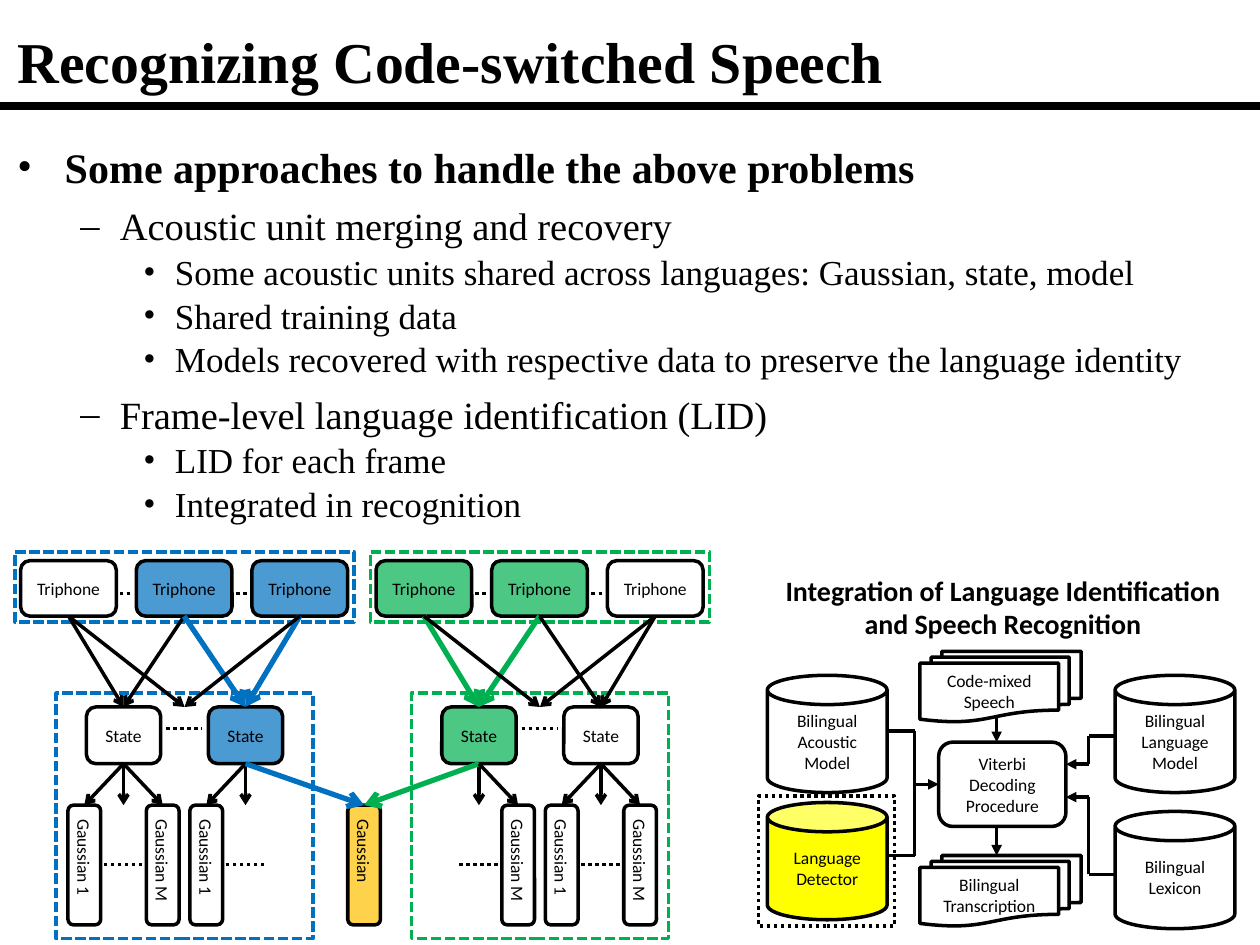
from lxml import etree
from pptx import Presentation
from pptx.dml.color import RGBColor
from pptx.enum import dml, shapes, text
from pptx.oxml.ns import qn
from pptx.util import Pt

COLORS = {"black": "000000", "white": "FFFFFF", "blue": "0070C0",
          "green": "00B050", "amber": "FFC000", "yellow": "FFFF00"}
SHAPE = shapes.MSO_SHAPE
DOT = dml.MSO_LINE.ROUND_DOT
DASH = dml.MSO_LINE.SQUARE_DOT
BODY = [
    (0, "Some approaches to handle the above problems"),
    (1, "Acoustic unit merging and recovery"),
    (2, "Some acoustic units shared across languages: Gaussian, state, model"),
    (2, "Shared training data"),
    (2, "Models recovered with respective data to preserve the language identity"),
    (1, "Frame-level language identification (LID)"),
    (2, "LID for each frame"),
    (2, "Integrated in recognition"),
]
LEVELS = [(24, 27, 27, "•", 1.2), (22, 58.5, 22.5, "–", 1.2), (20, 90, 18, "•", 1.0)]


def rgb(name):
    return RGBColor.from_string(COLORS[name])


def style(p, size, font="Calibri", bold=False, align=text.PP_ALIGN.CENTER):
    p.alignment = align
    for r in p.runs:
        r.font.size = Pt(size)
        r.font.name = font
        r.font.bold = bold
        r.font.color.rgb = rgb("black")


def set_line(line, color, width, dash=None):
    line.color.rgb = rgb(color)
    line.width = Pt(width)
    if dash is not None:
        line.dash_style = dash


def add_box(s, kind, x, y, w, h, label="", fill=None, alpha=100, line="black",
            dash=None, inset=None, vertical=False):
    sp = s.shapes.add_shape(kind, Pt(x), Pt(y), Pt(w), Pt(h))
    sp.shadow.inherit = False
    set_line(sp.line, line, 2, dash)
    if fill:
        sp.fill.solid()
        sp.fill.fore_color.rgb = rgb(fill)
        if alpha < 100:
            clr = sp._element.spPr.find(".//" + qn("a:srgbClr"))
            etree.SubElement(clr, qn("a:alpha")).set("val", str(alpha * 1000))
    else:
        sp.fill.background()
    if label:
        tf = sp.text_frame
        tf.text = label
        tf.word_wrap = True
        tf.vertical_anchor = text.MSO_ANCHOR.MIDDLE
        if inset is not None:
            tf.margin_left = tf.margin_right = Pt(inset)
            tf.margin_top = tf.margin_bottom = Pt(inset)
        if vertical:
            tf._txBody.bodyPr.set("vert", "eaVert")
        for p in tf.paragraphs:
            style(p, 10)
    return sp


def add_line(s, start, end, color="black", width=2, dash=None, arrow=None):
    c = s.shapes.add_connector(shapes.MSO_CONNECTOR.STRAIGHT,
                               *[Pt(v) for v in (*start, *end)])
    set_line(c.line, color, width, dash)
    if arrow:
        etree.SubElement(c.line._get_or_add_ln(), qn("a:tailEnd")).set("type", arrow)
    etree.SubElement(c._element.spPr, qn("a:effectLst"))
    return c


def add_link(s, upper, lower, color="black"):
    c = add_line(s, (0, 0), (0, 0), color, 2 if color == "black" else 3, arrow="arrow")
    c.begin_connect(upper, 2)
    c.end_connect(lower, 0)


def add_path(s, points, arrow=None):
    last = len(points) - 2
    for i, (start, end) in enumerate(zip(points, points[1:])):
        c = add_line(s, start, end, arrow=arrow if i == last else None)
    return c


def add_heading(s, x, y, w, h):
    sp = s.shapes.title
    sp.left, sp.top, sp.width, sp.height = Pt(x), Pt(y), Pt(w), Pt(h)
    tf = sp.text_frame
    tf.text = "Recognizing Code-switched Speech"
    tf.auto_size = text.MSO_AUTO_SIZE.NONE
    tf.vertical_anchor = text.MSO_ANCHOR.MIDDLE
    style(tf.paragraphs[0], 33, "Times New Roman", True, text.PP_ALIGN.LEFT)
    add_line(s, (0, 60.5), (720, 60.5), width=4.5)


def add_body(s, x, y, w, h):
    tf = s.shapes.add_textbox(Pt(x), Pt(y), Pt(w), Pt(h)).text_frame
    tf.word_wrap = True
    tf.text = "\n".join(line for _, line in BODY)
    for p, (level, _) in zip(tf.paragraphs, BODY):
        size, margin, hang, bullet, spacing = LEVELS[level]
        style(p, size, "Times New Roman", level == 0, text.PP_ALIGN.LEFT)
        p.level = level
        p.line_spacing = spacing
        p.space_before = Pt(1 if level else 3)
        pPr = p._p.get_or_add_pPr()
        pPr.set("marL", str(Pt(margin)))
        pPr.set("indent", str(-Pt(hang)))
        etree.SubElement(pPr, qn("a:buFont")).set("typeface", "Times New Roman")
        etree.SubElement(pPr, qn("a:buChar")).set("char", bullet)


def add_gaussian(s, cx, y, label, fill=None):
    return add_box(s, SHAPE.ROUNDED_RECTANGLE, cx - 9.35, y, 18.7, 68.4, label,
                   fill, 70, vertical=True)


def add_language(s, x, y, color, tinted, merged, shared):
    state_y, gauss_y = y + 88.6, y + 144.7
    add_box(s, SHAPE.RECTANGLE, x, y, 193.7, 40, line=color, dash=DASH)
    add_box(s, SHAPE.RECTANGLE, x + 23.4, y + 80.6, 146.9, 140.4, line=color, dash=DASH)
    triphones = [add_box(s, SHAPE.ROUNDED_RECTANGLE, x + 3.2 + 66.1 * i, y + 5, 54.7, 31.7,
                         "Triphone", color if i in tinted else None, 70)
                 for i in range(3)]
    for i in range(2):
        dot_x = x + 59.8 + 66.5 * i
        add_line(s, (dot_x, y + 23.8), (dot_x + 7.5, y + 23.8), dash=DOT)

    centers = [x + 62, x + 131.7]
    states = [add_box(s, SHAPE.ROUNDED_RECTANGLE, cx - 21.25, state_y, 42.5, 32.4,
                      "State", color if i == merged else None, 70)
              for i, cx in enumerate(centers)]
    add_line(s, (x + 86.4, y + 100.8), (x + 106.6, y + 100.8), dash=DOT)

    for t, n in [(0, 0), (1, 0), (1, 1), (2, 1)]:
        add_link(s, triphones[t], states[n],
                 color if t in tinted and n == merged else "black")
    for t in (triphones[0], triphones[2]):
        c = add_line(s, (0, 0), (sum(centers) / 2, state_y), arrow="arrow")
        c.begin_connect(t, 2)

    for i, cx in enumerate(centers):
        c = add_line(s, (cx, state_y), (cx, gauss_y), arrow="arrow")
        c.begin_connect(states[i], 2)
        add_line(s, (cx - 11.3, y + 178.6), (cx + 11.1, y + 178.6), dash=DOT)
        for side, label in [(-1, "Gaussian 1"), (1, "Gaussian M")]:
            inner = side == (1 if merged else -1)
            if i == merged and inner:
                add_link(s, states[i], shared, color)
            else:
                add_link(s, states[i], add_gaussian(s, cx + 22.4 * side, gauss_y, label))


def add_unit_sharing(s, x, y):
    shared = add_gaussian(s, x + 199.5, y + 144.7, "Gaussian", "amber")
    add_language(s, x, y, "blue", (1, 2), 1, shared)
    add_language(s, x + 203.1, y, "green", (0, 1), 0, shared)


def add_decoder(s, x, y):
    def node(kind, dx, dy, w, h, label, fill="white"):
        return add_box(s, kind, x + dx, y + dy, w, h, label, fill, inset=0)

    def route(*points, arrow="triangle"):
        return add_path(s, [(x + dx, y + dy) for dx, dy in points], arrow)

    tf = s.shapes.add_textbox(Pt(x + 7.2), Pt(y + 2.9), Pt(267.8), Pt(39.6)).text_frame
    tf.word_wrap = True
    tf.vertical_anchor = text.MSO_ANCHOR.MIDDLE
    tf.text = "Integration of Language Identification and Speech Recognition"
    style(tf.paragraphs[0], 16, bold=True)

    viterbi = node(SHAPE.ROUNDED_RECTANGLE, 104.4, 100.1, 72.7, 48.2,
                   "Viterbi\nDecoding\nProcedure")
    for dx, dy, label, fill in [
            (205.2, 61.9, "Bilingual\nLanguage\nModel", "white"),
            (205.2, 139.7, "Bilingual\nLexicon", "white"),
            (6.5, 61.9, "Bilingual\nAcoustic\nModel", "white"),
            (6.5, 134.6, "Language\nDetector", "yellow")]:
        node(SHAPE.CAN, dx, dy, 68.4, 67, label, fill)
    for dy, label in [(48.2, "Code-mixed Speech"), (164.9, "Bilingual\nTranscription")]:
        node(SHAPE.FLOWCHART_MULTIDOCUMENT, 93.6, dy, 92.2, 40.3, label)

    route((137.5, 86.4), (137.5, 100.1))
    route((137.5, 148.3), (137.5, 164.9))
    route((205.2, 96.5), (190.1, 96.5), (190.1, 112.7), (177.1, 112.7))
    route((205.2, 175.7), (190.1, 175.7), (190.1, 131.5), (177.1, 131.5))
    route((74.9, 93.6), (90.7, 93.6), (90.7, 164.9), (74.9, 164.9), arrow=None)
    route((90.7, 124.2), (104.4, 124.2)).end_connect(viterbi, 1)
    add_box(s, SHAPE.RECTANGLE, x + 1.4, y + 131, 77.8, 74.2, dash=DOT)


def main():
    prs = Presentation()
    prs.slide_width, prs.slide_height = Pt(720), Pt(540)
    s = prs.slides.add_slide(prs.slide_layouts[5])
    add_heading(s, 2.9, 9.4, 648, 49.7)
    add_body(s, 2.9, 71.3, 708.5, 459.4)
    add_unit_sharing(s, 8.6, 315.4)
    add_decoder(s, 432, 324)
    prs.save("out.pptx")


if __name__ == "__main__":
    main()
